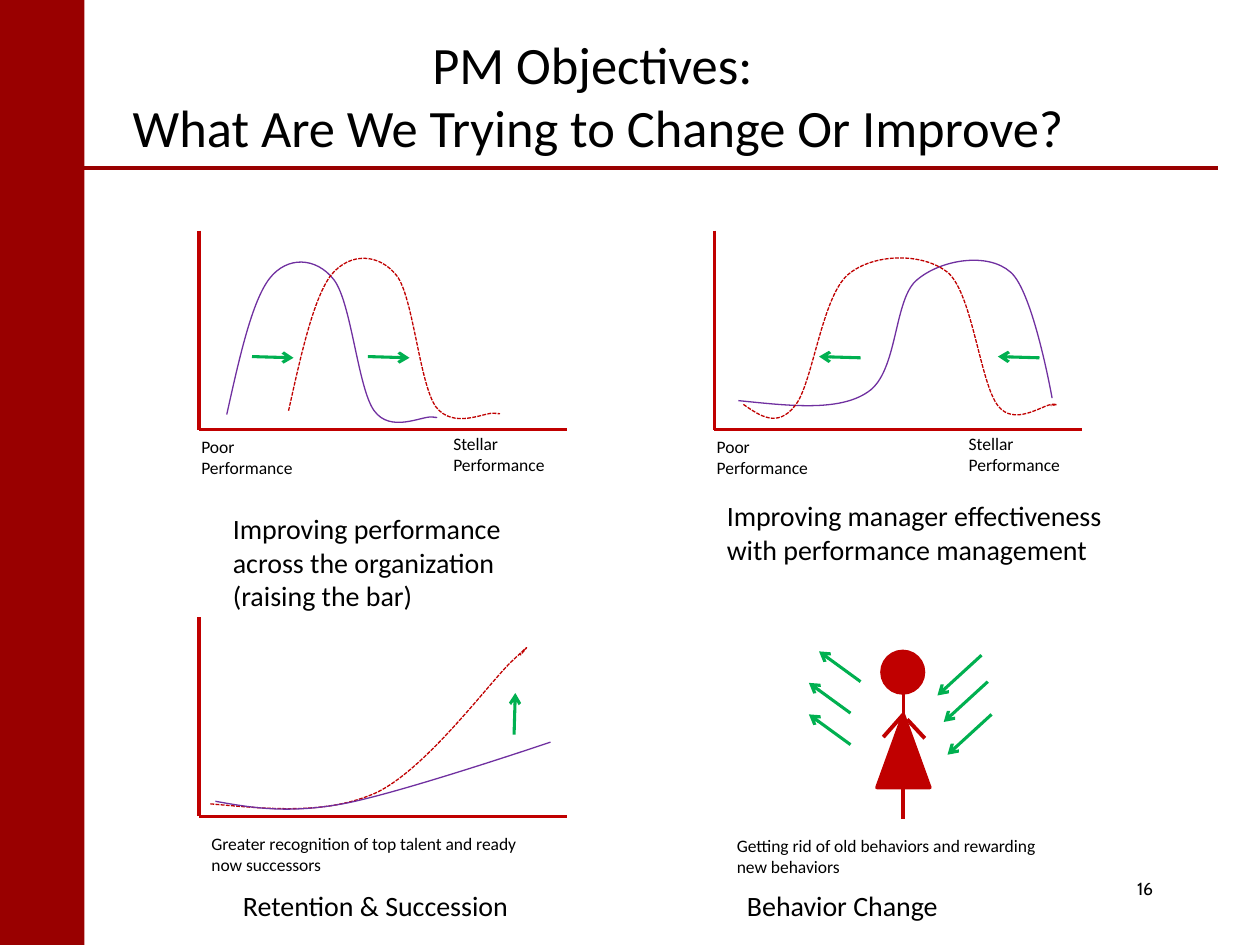
from dataclasses import dataclass
from itertools import pairwise

import lxml.etree
import pptx
import pptx.dml.color
import pptx.enum.dml
import pptx.enum.shapes
import pptx.enum.text
import pptx.oxml.ns
import pptx.util

Point = tuple[float, float]
SHAPES = pptx.enum.shapes.MSO_SHAPE
ALIGN = pptx.enum.text.PP_ALIGN
ANCHOR = pptx.enum.text.MSO_ANCHOR
qn = pptx.oxml.ns.qn


@dataclass(frozen=True)
class Theme:
    font: str = "Calibri"
    number_font: str = "Cabin"
    text: str = "000000"
    band: str = "990000"
    accent: str = "C00000"
    current: str = "7030A0"
    arrow: str = "00B050"
    title_size: float = 30
    caption_size: float = 16
    label_size: float = 10
    axis_width: float = 2
    limb_width: float = 2.25
    arrow_width: float = 1.75
    curve_width: float = 0.75


THEME = Theme()


@dataclass(frozen=True)
class Label:
    text: str
    left: float
    top: float
    width: float
    height: float
    size: float = THEME.label_size
    font: str = THEME.font
    align: ALIGN = ALIGN.LEFT
    anchor: ANCHOR = ANCHOR.TOP
    fits: bool = True


@dataclass(frozen=True)
class Curve:
    """A start point, then three Bezier points for each segment."""
    points: list[Point]
    color: str
    dashed: bool = False


@dataclass(frozen=True)
class Panel:
    left: float
    top: float
    curves: list[Curve]
    arrows: list[tuple[Point, Point]]
    has_scale: bool = True


def grid(units: float) -> pptx.util.Length:
    """Turn layout units of 2.54 cm into a length."""
    return pptx.util.Cm(units * 2.54)


def rgb(color: str) -> pptx.dml.color.RGBColor:
    return pptx.dml.color.RGBColor.from_string(color)


def draw_label(slide, label: Label) -> None:
    box = slide.shapes.add_textbox(*map(grid, (label.left, label.top, label.width, label.height)))
    frame = box.text_frame
    frame.word_wrap = True
    frame.vertical_anchor = label.anchor
    if label.fits:
        frame.auto_size = pptx.enum.text.MSO_AUTO_SIZE.SHAPE_TO_FIT_TEXT
    frame.text = label.text
    paragraph = frame.paragraphs[0]
    paragraph.alignment = label.align
    for run in paragraph.runs:
        run.font.name = label.font
        run.font.size = pptx.util.Pt(label.size)
        run.font.color.rgb = rgb(THEME.text)


def draw_line(slide, start: Point, end: Point, color: str, width: float, arrow: bool = False) -> None:
    line = slide.shapes.add_connector(
        pptx.enum.shapes.MSO_CONNECTOR.STRAIGHT, *map(grid, (*start, *end)))
    line.line.color.rgb = rgb(color)
    line.line.width = pptx.util.Pt(width)
    properties = line.element.spPr
    if arrow:
        lxml.etree.SubElement(properties.find(qn("a:ln")), qn("a:tailEnd"), type="arrow")
    lxml.etree.SubElement(properties, qn("a:effectLst"))


def draw_arrow(slide, start: Point, end: Point) -> None:
    draw_line(slide, start, end, THEME.arrow, THEME.arrow_width, arrow=True)


def draw_solid(slide, kind: SHAPES, bounds: tuple[float, ...], color: str, outlined: bool) -> None:
    solid = slide.shapes.add_shape(kind, *map(grid, bounds))
    solid.shadow.inherit = False
    solid.fill.solid()
    solid.fill.fore_color.rgb = rgb(color)
    if outlined:
        solid.line.color.rgb = rgb(color)
        solid.line.width = pptx.util.Pt(THEME.axis_width)
    else:
        solid.line.fill.background()


def draw_curve(slide, curve: Curve) -> None:
    """Build a polyline through all points, then turn each three lines into one Bezier."""
    start, *rest = [(grid(x), grid(y)) for x, y in curve.points]
    builder = slide.shapes.build_freeform(*start)
    builder.add_line_segments(rest, close=False)
    outline = builder.convert_to_shape()
    outline.shadow.inherit = False
    outline.fill.background()
    outline.line.color.rgb = rgb(curve.color)
    outline.line.width = pptx.util.Pt(THEME.curve_width)
    if curve.dashed:
        outline.line.dash_style = pptx.enum.dml.MSO_LINE.SQUARE_DOT
        outline.line.dash_style = pptx.enum.dml.MSO_LINE.SQUARE_DOT
        outline.element.spPr.find(".//" + qn("a:prstDash")).set("val", "sysDash")
    track = outline.element.spPr.find(".//" + qn("a:path"))
    segments = track.findall(qn("a:lnTo"))
    for first in range(0, len(segments), 3):
        bezier = lxml.etree.SubElement(track, qn("a:cubicBezTo"))
        for segment in segments[first:first + 3]:
            bezier.append(segment[0])
            track.remove(segment)


def draw_panel(slide, panel: Panel) -> None:
    left, top, bottom = panel.left, panel.top, panel.top + 1.58
    corners = [(left, top), (left, bottom), (left + 2.92, bottom)]
    for start, end in pairwise(corners):
        draw_line(slide, start, end, THEME.accent, THEME.axis_width)
    for curve in panel.curves:
        draw_curve(slide, curve)
    for start, end in panel.arrows:
        draw_arrow(slide, start, end)
    if panel.has_scale:
        draw_label(slide, Label("Poor Performance", left - 0.08, bottom, 1, 0.44))
        draw_label(slide, Label("Stellar Performance", left + 1.92, bottom - 0.02, 1, 0.44))


def draw_person(slide) -> None:
    draw_solid(slide, SHAPES.OVAL, (7, 5.17, 0.33, 0.33), THEME.accent, True)
    draw_line(slide, (7.17, 5.5), (7.17, 5.92), THEME.accent, THEME.axis_width)
    draw_solid(slide, SHAPES.ISOSCELES_TRIANGLE, (6.96, 5.67, 0.42, 0.58), THEME.accent, True)
    for start, end in [((7.17, 6.25), (7.17, 6.5)), ((7.17, 5.67), (7.01, 5.85)),
                       ((7.2, 5.71), (7.34, 5.86))]:
        draw_line(slide, start, end, THEME.accent, THEME.limb_width)
    for x, y in [(6.83, 5.41), (6.75, 5.66), (6.75, 5.91)]:
        draw_arrow(slide, (x, y), (x - 0.33, y - 0.24))
    for x, y in [(7.79, 5.2), (7.84, 5.41), (7.87, 5.67)]:
        draw_arrow(slide, (x, y), (x - 0.35, y + 0.32))


PANELS = [
    Panel(1.58, 1.83, [
        Curve([(1.8, 3.29), (1.9, 2.84), (2, 2.39), (2.14, 2.21), (2.28, 2.03), (2.51, 2.04),
               (2.65, 2.22), (2.79, 2.4), (2.84, 3.08), (2.97, 3.26), (3.1, 3.44), (3.35, 3.3),
               (3.43, 3.31), (3.5, 3.32), (3.46, 3.31), (3.42, 3.31)], THEME.current),
        Curve([(2.29, 3.26), (2.39, 2.81), (2.49, 2.36), (2.63, 2.18), (2.78, 2), (3.01, 2.01),
               (3.15, 2.19), (3.28, 2.36), (3.33, 3.05), (3.46, 3.23), (3.6, 3.41), (3.85, 3.27),
               (3.92, 3.28), (4, 3.29), (3.96, 3.28), (3.92, 3.28)], THEME.accent, True),
    ], [((x, 2.83), (x + 0.33, 2.84)) for x in (2, 2.92)]),
    Panel(5.67, 1.83, [
        Curve([(5.86, 3.18), (6.26, 3.22), (6.66, 3.27), (6.89, 3.11), (7.13, 2.95), (7.09, 2.37),
               (7.28, 2.22), (7.47, 2.06), (7.84, 2), (8.02, 2.16), (8.2, 2.31), (8.35, 3.16),
               (8.35, 3.16)], THEME.current),
        Curve([(5.9, 3.21), (6.03, 3.3), (6.17, 3.4), (6.31, 3.22), (6.45, 3.05), (6.52, 2.36),
               (6.73, 2.18), (6.93, 2.01), (7.33, 2), (7.53, 2.17), (7.72, 2.35), (7.78, 3.04),
               (7.92, 3.22), (8.05, 3.39), (8.28, 3.21), (8.35, 3.21), (8.42, 3.21), (8.38, 3.21),
               (8.34, 3.22)], THEME.accent, True),
    ], [((x, 2.84), (x - 0.33, 2.83)) for x in (6.83, 8.25)]),
    Panel(1.58, 4.9, [
        Curve([(1.67, 6.38), (2.13, 6.42), (2.59, 6.47), (2.99, 6.29), (3.38, 6.1), (3.86, 5.45),
               (4.05, 5.26), (4.24, 5.08), (4.18, 5.14), (4.13, 5.2)], THEME.accent, True),
        Curve([(1.71, 6.36), (1.99, 6.41), (2.28, 6.46), (2.72, 6.38), (3.16, 6.3), (4.37, 5.89),
               (4.37, 5.89)], THEME.current),
    ], [((4.08, 5.83), (4.09, 5.5))], has_scale=False),
]

LABELS = [
    Label("PM Objectives: \vWhat Are We Trying to Change Or Improve?", 0.75, 0.17, 8, 1.17,
          THEME.title_size, align=ALIGN.CENTER, anchor=ANCHOR.MIDDLE, fits=False),
    Label("Improving performance across the organization (raising the bar)",
          1.75, 4.01, 2.75, 0.91, THEME.caption_size),
    Label("Improving manager effectiveness with performance management",
          5.67, 3.91, 3.5, 0.64, THEME.caption_size),
    Label("Greater recognition of top talent and ready now successors", 1.58, 6.56, 2.67, 0.44),
    Label("Getting rid of old behaviors and rewarding new behaviors", 5.75, 6.58, 2.67, 0.44),
    Label("Retention & Succession", 1.83, 7, 2.75, 0.37, THEME.caption_size),
    Label("Behavior Change", 5.83, 7, 2.75, 0.37, THEME.caption_size),
    Label("16", 7.92, 6.92, 1.33, 0.42, font=THEME.number_font, align=ALIGN.RIGHT, fits=False),
]


def main() -> None:
    deck = pptx.Presentation()
    deck.slide_width, deck.slide_height = grid(10), grid(7.5)
    slide = deck.slides.add_slide(deck.slide_layouts[6])
    draw_solid(slide, SHAPES.RECTANGLE, (0, 0, 0.67, 7.5), THEME.band, False)
    draw_line(slide, (0.67, 1.33), (9.67, 1.33), THEME.band, THEME.limb_width)
    for panel in PANELS:
        draw_panel(slide, panel)
    draw_person(slide)
    for label in LABELS:
        draw_label(slide, label)
    deck.save("out.pptx")


if __name__ == "__main__":
    main()
